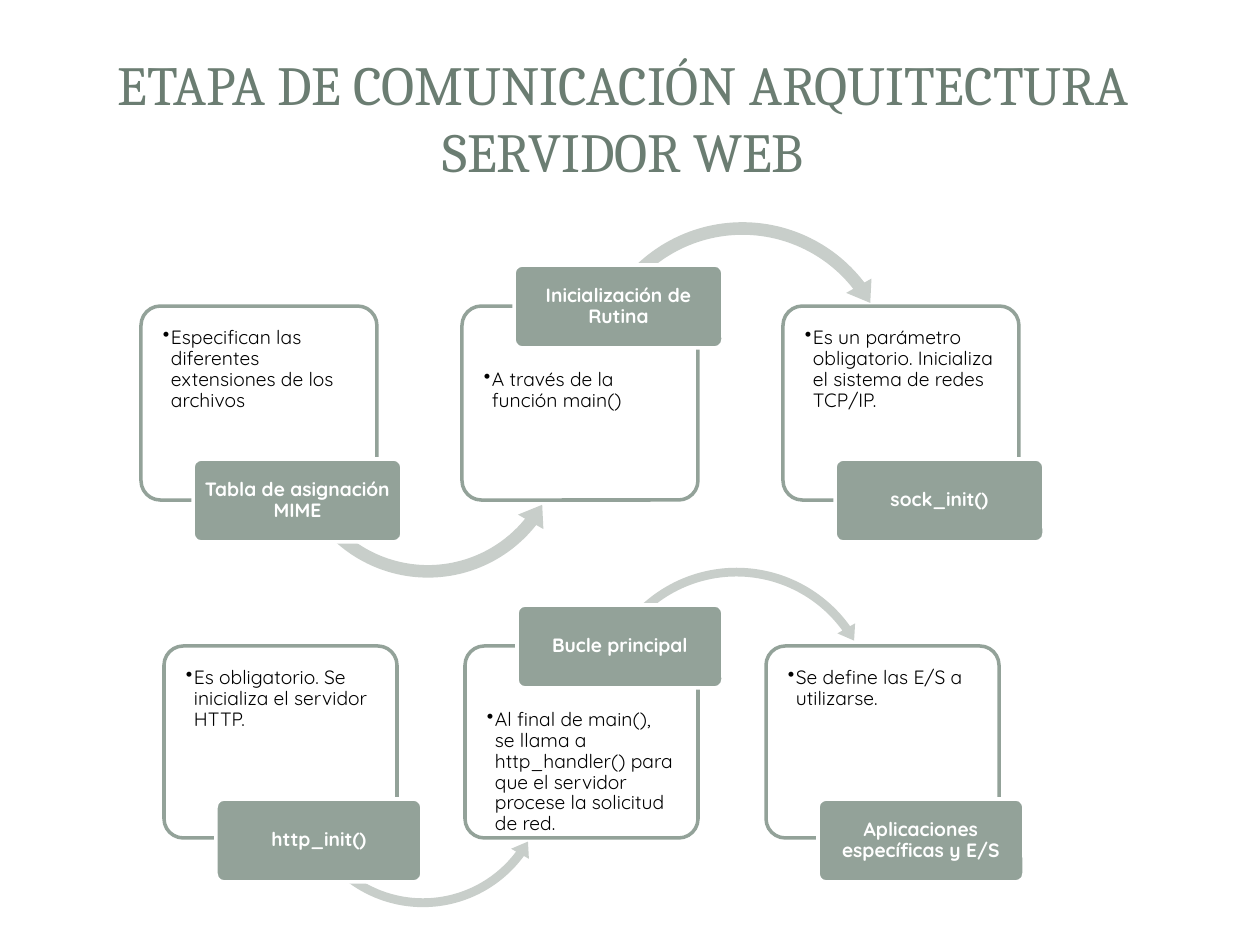
from lxml.etree import SubElement
from pptx import Presentation
from pptx.dml.color import RGBColor
from pptx.enum.shapes import MSO_SHAPE as Shape
from pptx.enum.text import MSO_ANCHOR as Anchor, MSO_AUTO_SIZE as AutoSize, PP_ALIGN as Align
from pptx.oxml.ns import qn
from pptx.util import Inches, Pt

WHITE = RGBColor(0xFF, 0xFF, 0xFF)
BLACK = RGBColor(0x00, 0x00, 0x00)
SAGE = RGBColor(0x93, 0xA2, 0x99)
PALE_SAGE = RGBColor(0xC8, 0xCE, 0xCA)
DARK_SAGE = RGBColor(0x6B, 0x7D, 0x72)


def px(length):
    return round(length * 914400 / 126)


class StageSlide:
    title_font = "Cambria"
    body_font = "Quicksand"
    body_size = Pt(11)

    def __init__(self, deck):
        self.slide = deck.slides.add_slide(deck.slide_layouts[5])
        self.shapes = self.slide.shapes

    def start_group(self):
        self.shapes = self.slide.shapes.add_group_shape().shapes

    def format_run(self, paragraph, font_name, size, color, bold=False):
        font = paragraph.runs[0].font
        font.name, font.size, font.bold = font_name, size, bold
        font.color.rgb = color

    def title(self, wording, left, top, width, height):
        title = self.slide.shapes.title
        title.left, title.top, title.width, title.height = map(px, (left, top, width, height))
        frame = title.text_frame
        frame.text = wording
        frame.auto_size = AutoSize.NONE
        frame.vertical_anchor = Anchor.MIDDLE
        frame.paragraphs[0].alignment = Align.CENTER
        self.format_run(frame.paragraphs[0], self.title_font, Pt(31.5), DARK_SAGE)

    def panel(self, left, top, width, height, fill, line, opacity=100):
        panel = self.shapes.add_shape(
            Shape.ROUNDED_RECTANGLE, *map(px, (left, top, width, height)))
        panel.shadow.inherit = False
        panel.adjustments[0] = 0.1
        panel.fill.solid()
        panel.fill.fore_color.rgb = fill
        panel.line.color.rgb = line
        panel.line.width = Pt(2)
        if opacity < 100:
            color = panel._element.spPr.find(qn("a:solidFill"))[0]
            SubElement(color, qn("a:alpha")).set("val", str(opacity * 1000))

    def text(self, wording, left, top, width, height, inset):
        box = self.shapes.add_textbox(*map(px, (left, top, width, height)))
        frame = box.text_frame
        frame.word_wrap = True
        frame.margin_left = frame.margin_right = px(inset)
        frame.margin_top = frame.margin_bottom = px(inset)
        frame.text = wording
        paragraph = frame.paragraphs[0]
        paragraph.line_spacing = 0.9
        return frame, paragraph

    def description(self, wording, left, top, width, height):
        _, paragraph = self.text(wording, left, top, width, height, 18)
        paragraph.level = 1
        properties = paragraph._p.get_or_add_pPr()
        properties.set("marL", str(px(8)))
        properties.set("indent", str(-px(8)))
        SubElement(properties, qn("a:buChar")).set("char", "•")
        self.format_run(paragraph, self.body_font, self.body_size, BLACK)

    def label(self, wording, left, top, width, height):
        self.panel(left, top, width, height, SAGE, WHITE)
        frame, paragraph = self.text(wording, left + 2, top + 2, width - 4, height - 4, 2)
        frame.vertical_anchor = Anchor.MIDDLE
        paragraph.alignment = Align.CENTER
        self.format_run(paragraph, self.body_font, self.body_size, WHITE, True)

    def arrow(self, preset, left, top, side, adjustments):
        arrow = self.shapes.add_shape(preset, *map(px, (left, top, side, side)))
        arrow.shadow.inherit = False
        for index, value in enumerate(adjustments):
            arrow.adjustments[index] = value
        arrow.fill.solid()
        arrow.fill.fore_color.rgb = PALE_SAGE
        arrow.line.fill.background()

    def stage_row(self, left, top, pitch, width, height, stages, arrows):
        self.start_group()
        for index, (name, detail) in enumerate(stages):
            x = left + index * pitch
            label_on_top = index % 2 == 1
            self.panel(x, top, width, height, WHITE, SAGE, 90)
            self.description(detail, x + 4, top + (46 if label_on_top else 4),
                             width - 9, height - 50)
            if index < len(arrows):
                self.arrow(*arrows[index])
            self.label(name, x + 52, top + (-41 if label_on_top else 153), width - 27, 83)


START_STAGES = [
    ("Tabla de asignación MIME", "Especifican las diferentes extensiones de los archivos"),
    ("Inicialización de Rutina", "A través de la función main()"),
    ("sock_init()", "Es un parámetro obligatorio. Inicializa el sistema de redes TCP/IP."),
]
START_ARROWS = [
    (Shape.LEFT_CIRCULAR_ARROW, 282, 294, 292, (0.043, 5.378, 23.133, 90.245, 0.05)),
    (Shape.CIRCULAR_ARROW, 581, 214, 323, (0.039, 4.829, 193.416, 125.755, 0.045)),
]
SERVICE_STAGES = [
    ("http_init()", "Es obligatorio. Se inicializa el servidor HTTP."),
    ("Bucle principal", "Al final de main(), se llama a http_handler() para que el servidor "
                        "procese la solicitud de red."),
    ("Aplicaciones específicas y E/S", "Se define las E/S a utilizarse."),
]
SERVICE_ARROWS = [
    (Shape.LEFT_CIRCULAR_ARROW, 292, 651, 262, (0.034, 4.143, 21.899, 90.245, 0.039)),
    (Shape.CIRCULAR_ARROW, 591, 562, 291, (0.03, 3.691, 194.554, 125.755, 0.035)),
]


def main():
    deck = Presentation()
    deck.slide_width, deck.slide_height = Inches(10), Inches(7.5)
    page = StageSlide(deck)
    page.title("ETAPA DE COMUNICACIÓN ARQUITECTURA SERVIDOR WEB", 54, 45, 1138, 144)
    page.stage_row(141, 306, 321, 236, 194, START_STAGES, START_ARROWS)
    page.stage_row(164, 646, 301, 233, 192, SERVICE_STAGES, SERVICE_ARROWS)
    deck.save("out.pptx")


if __name__ == "__main__":
    main()
